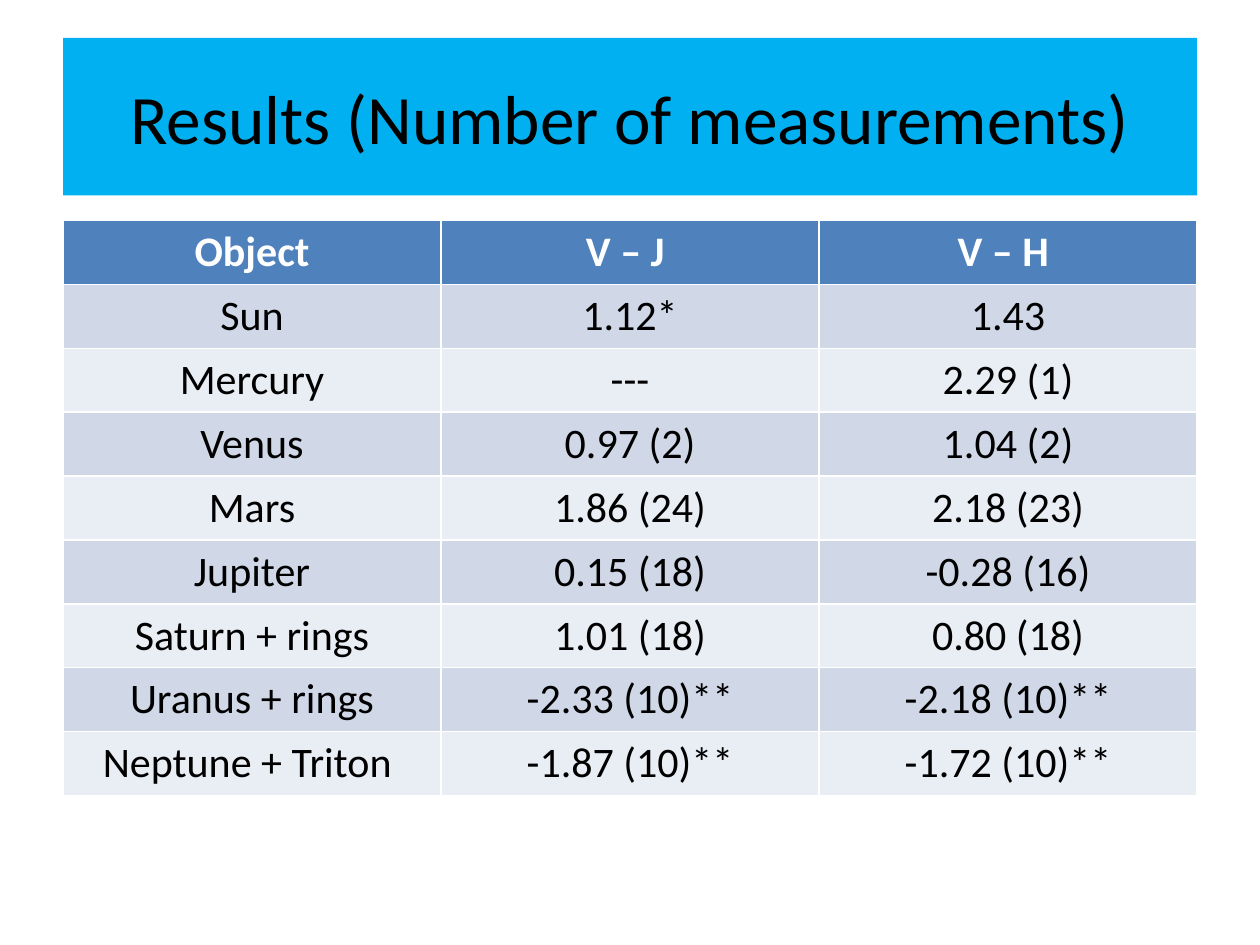
from pptx import Presentation
from pptx.dml.color import RGBColor
from pptx.enum.text import MSO_ANCHOR, MSO_AUTO_SIZE, PP_ALIGN
from pptx.util import Inches, Pt

FONT = "Calibri"
HEADER_FILL = "4F81BD"
BAND_FILLS = ("D0D8E8", "E9EDF4")

RESULTS = [
    ("Object", "V – J ", "V – H "),
    ("Sun", "1.12*", "1.43"),
    ("Mercury", "---", "2.29 (1)"),
    ("Venus", "0.97 (2)", "1.04 (2)"),
    ("Mars", "1.86 (24)", "2.18 (23)"),
    ("Jupiter", "0.15 (18)", "-0.28 (16)"),
    ("Saturn + rings", "1.01 (18)", "0.80 (18)"),
    ("Uranus + rings", "-2.33 (10)**", "-2.18 (10)**"),
    ("Neptune + Triton ", "-1.87 (10)**", "-1.72 (10)**"),
]


def paint(fill, color):
    fill.solid()
    fill.fore_color.rgb = RGBColor.from_string(color)


def write_centred(frame, text, size, color="000000", bold=False):
    para = frame.paragraphs[0]
    para.alignment = PP_ALIGN.CENTER
    span = para.add_run()
    span.text = text
    span.font.name = FONT
    span.font.size = Pt(size)
    span.font.bold = bold
    paint(span.font.fill, color)


def place_title(page, box, text):
    title = page.shapes.title
    title.left, title.top, title.width, title.height = box
    paint(title.fill, "00B0F0")
    frame = title.text_frame
    frame.word_wrap = True
    frame.auto_size = MSO_AUTO_SIZE.NONE
    frame.vertical_anchor = MSO_ANCHOR.MIDDLE
    write_centred(frame, text, 39.6)


def place_results(page, box, rows):
    # The default table style supplies the white grid lines
    table = page.shapes.add_table(len(rows), len(rows[0]), *box).table
    for row_index, values in enumerate(rows):
        header = row_index == 0
        fill = HEADER_FILL if header else BAND_FILLS[(row_index - 1) % 2]
        for column_index, value in enumerate(values):
            cell = table.cell(row_index, column_index)
            paint(cell.fill, fill)
            color = "FFFFFF" if header else "000000"
            write_centred(cell.text_frame, value, 24, color, header)


def main():
    deck = Presentation()
    deck.slide_width, deck.slide_height = Inches(10), Inches(7.5)
    page = deck.slides.add_slide(deck.slide_layouts[5])
    paint(page.background.fill, "FFFFFF")

    # Title band
    left, width = Inches(0.5), Inches(9)
    place_title(page, (left, Inches(0.3), width, Inches(1.25)),
                "Results (Number of measurements)")

    # Table of colour indices
    place_results(page, (left, Inches(1.75), width, Inches(4.5)), RESULTS)
    deck.save("out.pptx")


if __name__ == "__main__":
    main()
